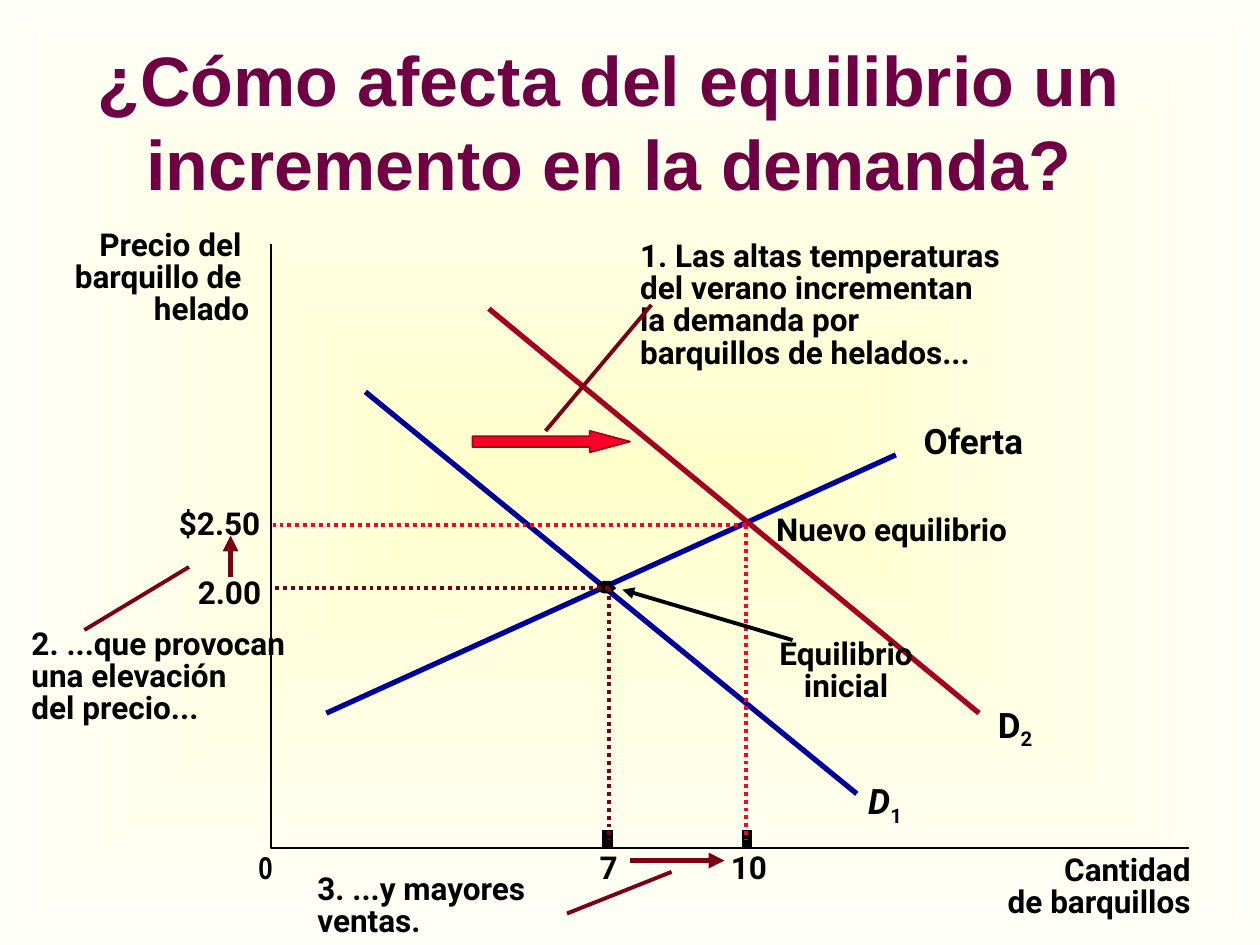
import pptx
import pptx.dml.color
import pptx.enum.dml
import pptx.enum.shapes
import pptx.enum.text
import pptx.oxml.ns
import pptx.util
from lxml import etree
from pptx.util import Inches

COLORS = {
    "title": "6E0043", "text": "000000", "axis": "000000", "blue": "000099",
    "red": "A50021", "bright": "FC0128", "dark": "790015",
    "bg_center": "FFFFCC", "bg_edge": "FFFFFA",
}
ALIGN = pptx.enum.text.PP_ALIGN
DOT = pptx.enum.dml.MSO_LINE.ROUND_DOT
TIGHT = 0.85


def rgb(name):
    return pptx.dml.color.RGBColor.from_string(COLORS[name])


def add_xml(parent, tag, **attrs):
    return etree.SubElement(parent, pptx.oxml.ns.qn(tag), attrs)


def set_font(r, **formats):
    values = {"name": "Roboto", "size": pptx.util.Pt(18), "bold": True, **formats}
    color = values.pop("color", "text")
    for key, value in values.items():
        setattr(r.font, key, value)
    r.font.color.rgb = rgb(color)


def add_label(s, box, text, align=ALIGN.LEFT, spacing=None, inset=(0, 0), **formats):
    """Unwrapped text; each item of a list is a paragraph, a newline is a line break."""
    sp = s.shapes.add_textbox(*map(Inches, box))
    tf = sp.text_frame
    tf.margin_left = tf.margin_right = Inches(inset[0])
    tf.margin_top = tf.margin_bottom = Inches(inset[1])
    tf.word_wrap = False
    tf.auto_size = pptx.enum.text.MSO_AUTO_SIZE.SHAPE_TO_FIT_TEXT
    for i, line in enumerate([text] if isinstance(text, str) else text):
        p = tf.add_paragraph() if i else tf.paragraphs[0]
        p.text = line
        p.alignment = align
        if spacing:
            p.line_spacing = spacing
        for r in p.runs:
            set_font(r, **formats)
    return sp


def add_line(s, start, end, color, width, dash=None, arrow=None):
    """Straight line; arrow is 'head' (at the start) or 'tail' (at the end)."""
    sp = s.shapes.add_connector(pptx.enum.shapes.MSO_CONNECTOR.STRAIGHT,
                                *map(Inches, (*start, *end)))
    sp.line.color.rgb = rgb(color)
    sp.line.width = pptx.util.Pt(width)
    if dash:
        sp.line.dash_style = dash
    if arrow:
        add_xml(sp.line._get_or_add_ln(), f"a:{arrow}End", type="triangle")
    add_xml(sp._element.spPr, "a:effectLst")


def add_outline(s, points, close):
    (x, y), *rest = [tuple(map(Inches, point)) for point in points]
    builder = s.shapes.build_freeform(x, y)
    builder.add_line_segments(rest, close=close)
    sp = builder.convert_to_shape()
    sp.shadow.inherit = False
    return sp


def set_background(s):
    fill = s.background.fill
    fill.gradient()
    for stop, name in zip(fill.gradient_stops, ("bg_center", "bg_edge")):
        stop.color.rgb = rgb(name)
    grad = next(s._element.iter(pptx.oxml.ns.qn("a:gradFill")))
    grad.remove(grad.find(pptx.oxml.ns.qn("a:lin")))
    shade = add_xml(grad, "a:path", path="shape")
    add_xml(shade, "a:fillToRect", l="50000", t="50000", r="50000", b="50000")


def add_title(s, box, text):
    sp = s.shapes.title
    for key, value in zip(("left", "top", "width", "height"), box):
        setattr(sp, key, Inches(value))
    tf = sp.text_frame
    tf.word_wrap = True
    tf.vertical_anchor = pptx.enum.text.MSO_ANCHOR.MIDDLE
    p = tf.paragraphs[0]
    p.text = text
    p.alignment = ALIGN.CENTER
    set_font(p.runs[0], name="Arial", size=pptx.util.Pt(40), color="title")


def add_axes(s, box):
    x, y, w, h = box
    bottom = y + h
    sp = add_outline(s, [(x, y), (x, bottom), (x + w, bottom)], close=False)
    sp.fill.background()
    sp.line.color.rgb = rgb("axis")
    sp.line.width = pptx.util.Pt(1)
    for dx in (2.67, 3.78):
        add_line(s, (x + dx, bottom - 0.14), (x + dx, bottom), "axis", 6)
    add_label(s, (x - 1.73, y - 0.11, 1.56, 0.77),
              "Precio del \nbarquillo de \nhelado", ALIGN.RIGHT, TIGHT)
    add_label(s, (x + w - 1.61, bottom + 0.06, 1.62, 0.51),
              "Cantidad\nde barquillos", ALIGN.RIGHT, TIGHT)
    for dx, w_label, text, font in ((-0.1, 0.11, "0", "Arial Narrow"),
                                    (2.61, 0.16, "7", "Roboto"),
                                    (3.65, 0.32, "10", "Roboto")):
        add_label(s, (x + dx, bottom, w_label, 0.3), text, name=font)
    for dx, dy, w_label, text in ((-0.73, 2.06, 0.72, "$2.50"),
                                  (-0.58, 2.61, 0.56, "2.00")):
        add_label(s, (x + dx, y + dy, w_label, 0.3), text)


def add_curves(s, box):
    x, y = box[:2]
    for x1, y1, x2, y2, color in ((0.44, 3.72, 4.96, 1.67, "blue"),
                                  (0.75, 1.17, 4.65, 4.36, "blue"),
                                  (1.73, 0.51, 5.62, 3.72, "red")):
        add_line(s, (x + x1, y + y1), (x + x2, y + y2), color, 3)
    size = pptx.util.Pt(20)
    add_label(s, (x + 5.18, y + 1.39, 0.89, 0.33), "Oferta", size=size)
    for dx, dy, number, italic in ((4.74, 4.25, "1", True), (5.77, 3.64, "2", False)):
        sp = add_label(s, (x + dx, y + dy, 0.32, 0.33), "D", size=size, italic=italic)
        r = sp.text_frame.paragraphs[0].add_run()
        r.text = number
        set_font(r, size=size, italic=False)
        r.font._element.set("baseline", "-25000")


def add_equilibria(s, box):
    x, y = box[:2]
    cx, cy = x + 2.66, y + 2.72
    dot = add_outline(s, [(cx + dx, cy + dy) for dx, dy in (
        (0, 0.05), (0.03, 0.05), (0.08, 0.01), (0.03, -0.05),
        (-0.02, -0.05), (-0.07, -0.03), (-0.07, 0.03), (-0.02, 0.05))], close=True)
    dot.fill.solid()
    dot.fill.fore_color.rgb = rgb("text")
    dot.line.fill.background()
    for dx, dy, color in ((2.68, 2.73, "dark"), (3.77, 2.23, "bright")):
        corner = (x + dx, y + dy)
        for end in ((x + 0.02, y + dy), (x + dx, y + 4.73)):
            add_line(s, corner, end, color, 2.25, dash=DOT)
    add_label(s, (x + 4.01, y + 2.11, 2.06, 0.3), "Nuevo equilibrio")
    add_label(s, (x + 3.97, y + 3.14, 1.19, 0.51), ["Equilibrio", "inicial"],
              ALIGN.CENTER, TIGHT)
    add_line(s, (x + 2.79, y + 2.74), (x + 4.14, y + 3.14), "text", 2.25, arrow="head")


def add_shifts(s, box):
    """Arrows for the moves of demand, price and quantity."""
    x, y = box[:2]
    sp = s.shapes.add_shape(pptx.enum.shapes.MSO_SHAPE.RIGHT_ARROW,
                            *map(Inches, (x + 1.6, y + 1.48, 1.25, 0.17)))
    sp.adjustments[0], sp.adjustments[1] = 0.5, 1.875
    sp.shadow.inherit = False
    sp.fill.solid()
    sp.fill.fore_color.rgb = rgb("bright")
    sp.line.color.rgb = rgb("red")
    sp.line.width = pptx.util.Pt(1)
    for x1, y1, x2, y2 in ((-0.32, 2.64, -0.32, 2.31), (2.85, 4.89, 3.6, 4.89)):
        add_line(s, (x + x1, y + y1), (x + x2, y + y2), "dark", 3, arrow="tail")


def add_callout(s, box, text, start, end, inset=(0, 0)):
    """Note with a pointer whose ends are offsets from the corner of the box."""
    x, y = box[:2]
    add_label(s, box, text, spacing=TIGHT, inset=inset)
    add_line(s, (x + start[0], y + start[1]), (x + end[0], y + end[1]), "dark", 2.25)


def main():
    prs = pptx.Presentation()
    prs.slide_width, prs.slide_height = Inches(10), Inches(7.5)
    s = prs.slides.add_slide(prs.slide_layouts[5])
    set_background(s)
    add_title(s, (0.58, 0.33, 8.5, 1.25),
              "¿Cómo afecta del equilibrio un incremento en la demanda?")
    plot = (2.15, 1.94, 7.29, 4.79)
    for add_part in (add_axes, add_curves, add_equilibria, add_shifts):
        add_part(s, plot)
    add_callout(s, (5.08, 1.92, 3.19, 1.02),
                "1. Las altas temperaturas\ndel verano incrementan\n"
                "la demanda por\nbarquillos de helados...", (0.09, 0.5), (-0.75, 1.5))
    add_callout(s, (0.25, 5, 2.24, 0.77),
                "2. ...que provocan\nuna elevación\ndel precio...", (0.42, 0), (1.25, -0.5))
    add_callout(s, (2.42, 6.89, 2.03, 0.61), "3. ...y mayores\nventas.",
                (2.08, 0.36), (2.91, 0.03), inset=(0.1, 0.05))
    prs.save("out.pptx")


if __name__ == "__main__":
    main()
